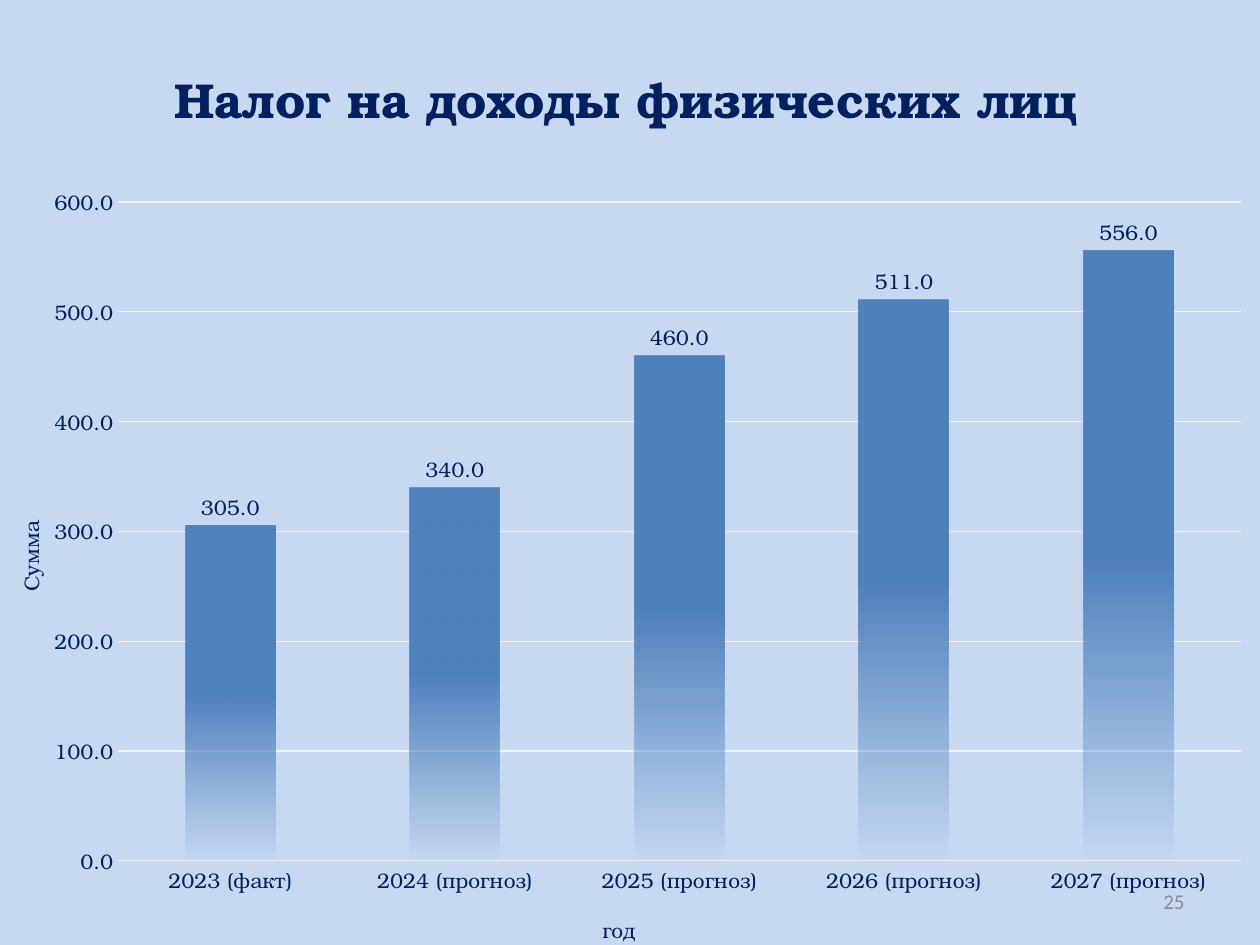
from dataclasses import dataclass

from lxml import etree
from pptx import Presentation
from pptx import util as u
from pptx.chart.data import CategoryChartData
from pptx.dml.color import RGBColor
from pptx.enum import chart as ch, text
from pptx.oxml import ns

Pt = u.Pt
COLORS = {"bg": "C6D9F1", "navy": "002060", "bar": "4F81BD", "grid": "F2F2F2", "number": "8C8C8C"}
SERIF = "TeX Gyre Bonum"
CHART_W, CHART_H = 726.5, 465


@dataclass
class Bar:
    category: str
    value: float


@dataclass
class AxisTitle:
    """Caption and its top left corner, in points from the chart's corner."""
    caption: str
    left: float
    top: float


BARS = [
    Bar("2023 (факт)", 305),
    Bar("2024 (прогноз)", 340),
    Bar("2025 (прогноз)", 460),
    Bar("2026 (прогноз)", 511),
    Bar("2027 (прогноз)", 556),
]
YEAR = AxisTitle("год", 348.5, 433)
AMOUNT = AxisTitle("Сумма", 12.5, 208.5)


def rgb(name: str) -> RGBColor:
    return RGBColor.from_string(COLORS[name])


def style_font(font, size: float, color: str = "navy", name: str = SERIF, bold: bool = False) -> None:
    font.size, font.name, font.bold = Pt(size), name, bold
    font.color.rgb = rgb(color)


def add_text(s, content: str, *, left: float, top: float, width: float, height: float,
             align, **font_format) -> None:
    tf = s.shapes.add_textbox(Pt(left), Pt(top), Pt(width), Pt(height)).text_frame
    tf.word_wrap = True
    tf.vertical_anchor = text.MSO_ANCHOR.MIDDLE
    p = tf.paragraphs[0]
    p.alignment = align
    r = p.add_run()
    r.text = content
    style_font(r.font, **font_format)


def set_layout(parent, left: float, top: float, size: tuple[float, float] | None = None) -> None:
    """Place an axis title, or the inner plot area if a size is given, in points."""
    for old in parent.findall(ns.qn("c:layout")):
        parent.remove(old)
    values = {"xMode": "edge", "yMode": "edge", "x": left / CHART_W, "y": top / CHART_H}
    if size:
        values = {"layoutTarget": "inner", **values, "w": size[0] / CHART_W, "h": size[1] / CHART_H}
    layout = etree.Element(ns.qn("c:layout"))
    manual = etree.SubElement(layout, ns.qn("c:manualLayout"))
    for tag, value in values.items():
        etree.SubElement(manual, ns.qn(f"c:{tag}")).set("val", str(value))
    parent.insert(0 if size else 1, layout)


def style_axis(axis, title: AxisTitle) -> None:
    axis.major_tick_mark = axis.minor_tick_mark = ch.XL_TICK_MARK.NONE
    axis.format.line.fill.background()
    style_font(axis.tick_labels.font, 12)
    p = axis.axis_title.text_frame.paragraphs[0]
    r = p.add_run()
    r.text = title.caption
    style_font(r.font, 12)
    set_layout(axis.axis_title._element, title.left, title.top)


def fade_bars(series) -> None:
    """Fill the bars solid in the upper half, fading out towards the base."""
    fill = series.format.fill
    fill.gradient()
    fill.gradient_angle = 270
    for stop, position in zip(fill.gradient_stops, (0.5, 1)):
        stop.color.rgb = rgb("bar")
        stop.position = position
    last_color = list(series._element.iter(ns.qn("a:srgbClr")))[-1]
    etree.SubElement(last_color, ns.qn("a:alpha")).set("val", "0")


def add_tax_chart(s) -> None:
    data = CategoryChartData(number_format="0.0")
    data.categories = [bar.category for bar in BARS]
    data.add_series("Series 1", [bar.value for bar in BARS])
    chart = s.shapes.add_chart(ch.XL_CHART_TYPE.COLUMN_CLUSTERED,
                               Pt(-6.5), Pt(87), Pt(CHART_W), Pt(CHART_H), data).chart
    chart.has_legend = chart.has_title = False
    style_font(chart.font, 10)

    style_axis(chart.category_axis, YEAR)
    axis = chart.value_axis
    style_axis(axis, AMOUNT)
    axis.minimum_scale, axis.maximum_scale, axis.major_unit = 0, 600, 100
    axis.tick_labels.number_format = "0.0"
    axis.tick_labels.number_format_is_linked = False
    grid = axis.major_gridlines.format.line
    grid.width = Pt(0.75)
    grid.color.rgb = rgb("grid")

    plot = chart.plots[0]
    plot.gap_width = 150
    plot.vary_by_categories = False
    fade_bars(plot.series[0])
    labels = plot.series[0].data_labels
    labels.show_value = True
    labels.position = ch.XL_LABEL_POSITION.OUTSIDE_END
    labels.number_format = "0.0"
    labels.number_format_is_linked = False
    style_font(labels.font, 12)
    set_layout(chart._chartSpace.find(".//" + ns.qn("c:plotArea")), 74, 28.5, size=(641.5, 376.5))


def main() -> None:
    prs = Presentation()
    prs.slide_width, prs.slide_height = Pt(720), Pt(540)
    s = prs.slides.add_slide(prs.slide_layouts[6])
    s.background.fill.solid()
    s.background.fill.fore_color.rgb = rgb("bg")
    add_text(s, "Налог на доходы физических лиц", left=-2.5, top=26.5, width=720, height=60.5,
             align=text.PP_ALIGN.CENTER, size=28, bold=True)
    add_text(s, "25", left=516, top=500.5, width=168, height=28.75,
             align=text.PP_ALIGN.RIGHT, size=12, color="number", name="Calibri")
    add_tax_chart(s)
    prs.save("out.pptx")


if __name__ == "__main__":
    main()
